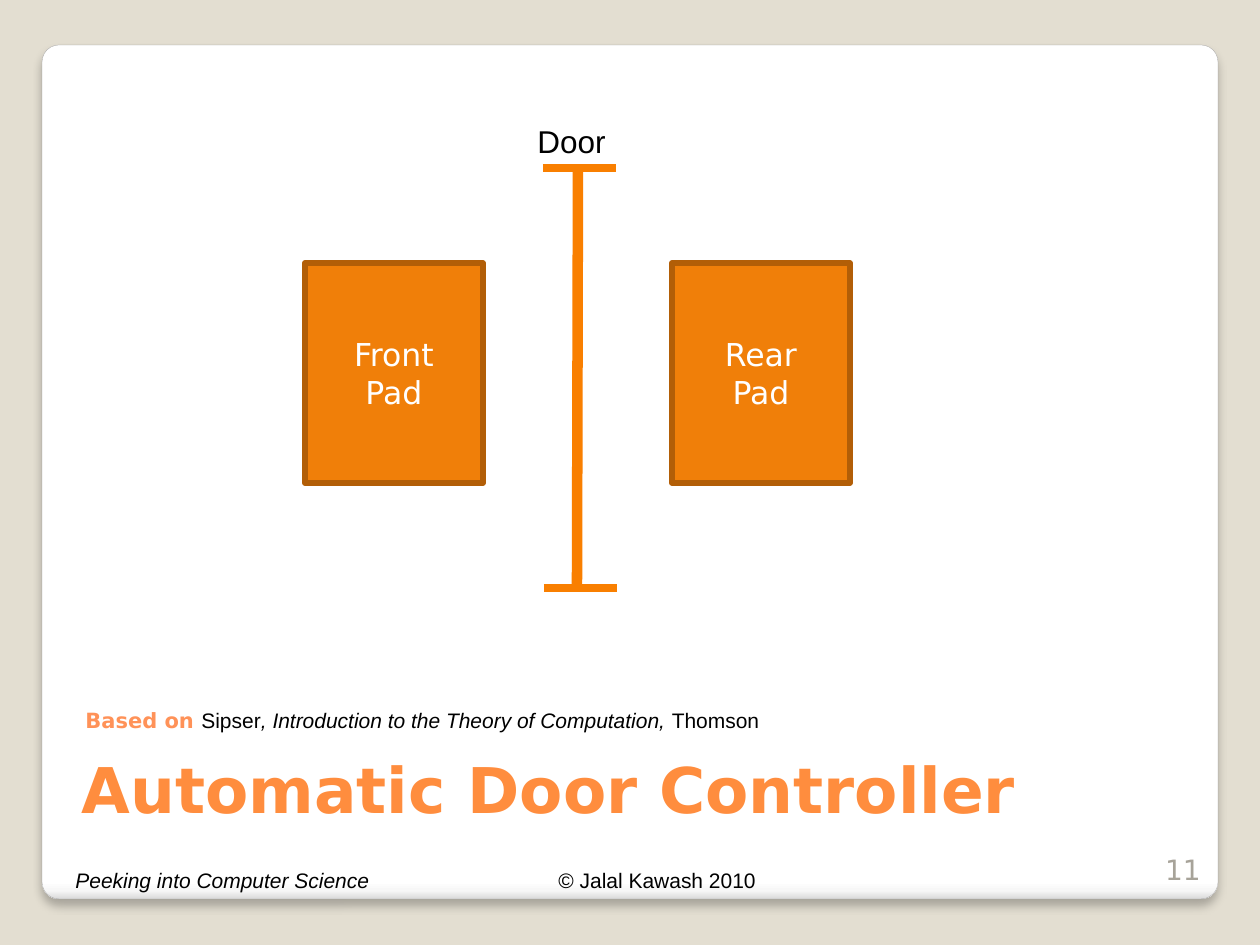
from dataclasses import dataclass

from lxml import etree
from pptx import Presentation
from pptx.dml.color import RGBColor
from pptx.enum.shapes import MSO_CONNECTOR, MSO_SHAPE
from pptx.enum.text import MSO_ANCHOR, MSO_AUTO_SIZE, PP_ALIGN
from pptx.oxml import parse_xml
from pptx.oxml.ns import qn
from pptx.util import Emu, Pt

STRAIGHT = MSO_CONNECTOR.STRAIGHT
RECTANGLE = MSO_SHAPE.RECTANGLE
ROUNDED = MSO_SHAPE.ROUNDED_RECTANGLE
TOP, MIDDLE, BOTTOM = MSO_ANCHOR.TOP, MSO_ANCHOR.MIDDLE, MSO_ANCHOR.BOTTOM
LEFT, CENTER, RIGHT = PP_ALIGN.LEFT, PP_ALIGN.CENTER, PP_ALIGN.RIGHT
NO_AUTOFIT = MSO_AUTO_SIZE.NONE
TITLE_ONLY = 5
PIXELS_PER_INCH = 126
DRAWING = "http://schemas.openxmlformats.org/drawingml/2006/main"


@dataclass(frozen=True)
class Theme:
    sans: str = "Arial"
    display: str = "DejaVu Sans"
    background: str = "E3DED1"
    panel_line: str = "A4A3A3"
    panel_stops: tuple = ((0, "FFFFFF"), (98, "FFFFFF"), (99, "F7F7F7"), (100, "DADADA"))
    title: str = "FF8D3E"
    source: str = "FF9258"
    pad: str = "F07F09"
    pad_line: str = "B25E07"
    door: str = "F97F00"
    number: str = "A7A399"
    black: str = "000000"
    white: str = "FFFFFF"
    title_size: int = 36
    label_size: int = 18
    number_size: int = 16
    small_size: int = 12


THEME = Theme()


def px(value):
    return Emu(round(value * 914400 / PIXELS_PER_INCH))


def color(value):
    return RGBColor.from_string(value)


def write_text(shape, paragraphs, size, font=THEME.sans, fill=THEME.black, bold=False,
               italic=False, align=LEFT, anchor=TOP, wrap=True):
    frame = shape.text_frame
    frame.auto_size = NO_AUTOFIT
    frame.word_wrap = wrap
    frame.vertical_anchor = anchor
    for index, runs in enumerate(paragraphs):
        paragraph = frame.paragraphs[0] if index == 0 else frame.add_paragraph()
        paragraph.alignment = align
        for text, changes in runs:
            style = {"font": font, "fill": fill, "bold": bold, "italic": italic, **changes}
            run = paragraph.add_run()
            run.text = text
            run.font.name = style["font"]
            run.font.size = Pt(size)
            run.font.bold = style["bold"]
            run.font.italic = style["italic"]
            run.font.color.rgb = color(style["fill"])


def add_label(slide, box, runs, size, **style):
    shape = slide.shapes.add_textbox(*map(px, box))
    write_text(shape, [runs], size, **style)


def add_panel(slide, box):
    panel = slide.shapes.add_shape(ROUNDED, *map(px, box))
    panel.adjustments[0] = 0.02
    panel.line.color.rgb = color(THEME.panel_line)
    panel.line.width = Pt(0.16)
    panel.fill.gradient()
    panel.fill.gradient_angle = 270
    properties = panel.element.spPr
    stops = properties.find(qn("a:gradFill")).find(qn("a:gsLst"))
    for stop in list(stops):
        stops.remove(stop)
    for position, value in THEME.panel_stops:
        stop = etree.SubElement(stops, qn("a:gs"), pos=str(position * 1000))
        etree.SubElement(stop, qn("a:srgbClr"), val=value)
    properties.append(parse_xml(
        f'<a:effectLst xmlns:a="{DRAWING}"><a:outerShdw blurRad="{Pt(5)}" dist="{Pt(4)}" '
        f'dir="5400000" algn="t" rotWithShape="0"><a:srgbClr val="{THEME.black}">'
        '<a:alpha val="25000"/></a:srgbClr></a:outerShdw></a:effectLst>'))
    slide.shapes.title.element.addprevious(panel.element)


def add_pad(slide, box, words):
    pad = slide.shapes.add_shape(RECTANGLE, *map(px, box))
    pad.shadow.inherit = False
    pad.fill.solid()
    pad.fill.fore_color.rgb = color(THEME.pad)
    pad.line.color.rgb = color(THEME.pad_line)
    pad.line.width = Pt(3.35)
    write_text(pad, [[(word, {})] for word in words], THEME.label_size,
               font=THEME.display, fill=THEME.white, align=CENTER, anchor=MIDDLE)


def add_line(slide, start, end, width):
    line = slide.shapes.add_connector(STRAIGHT, *map(px, start + end))
    line.line.color.rgb = color(THEME.door)
    line.line.width = Pt(width)
    etree.SubElement(line.element.spPr, qn("a:effectLst"))


def add_title(slide, box, text):
    title = slide.shapes.title
    title.left, title.top, title.width, title.height = map(px, box)
    write_text(title, [[(text, {})]], THEME.title_size, font=THEME.display,
               fill=THEME.title, bold=True, anchor=BOTTOM)


def main():
    presentation = Presentation()
    presentation.slide_width, presentation.slide_height = px(1260), px(945)
    slide = presentation.slides.add_slide(presentation.slide_layouts[TITLE_ONLY])
    slide.background.fill.solid()
    slide.background.fill.fore_color.rgb = color(THEME.background)

    add_panel(slide, (42, 45, 1176, 854))
    add_label(slide, (546, 861, 224, 38), [("© Jalal Kawash 2010", {})],
              THEME.small_size, wrap=False)
    add_label(slide, (63, 861, 321, 38), [("Peeking into Computer Science", {})],
              THEME.small_size, italic=True, wrap=False)
    add_title(slide, (69, 687, 1128, 145), "Automatic Door Controller")

    for left, side in ((305, "Front"), (672, "Rear")):
        add_pad(slide, (left, 263, 178, 220), (side, "Pad"))

    add_line(slide, (578, 168), (577, 588), 6)
    for left, top in ((543, 168), (544, 588)):
        add_line(slide, (left, top), (left + 73, top), 4.5)
    add_label(slide, (525, 116, 102, 50), [("Door", {})], THEME.label_size, wrap=False)

    source = [
        ("Based on ", {"font": THEME.display, "fill": THEME.source, "bold": True}),
        ("Sipser", {}),
        (", Introduction to the Theory of Computation, ", {"italic": True}),
        ("Thomson", {}),
    ]
    add_label(slide, (73, 619, 1128, 120), source, THEME.small_size, anchor=BOTTOM)
    add_label(slide, (1150, 842, 63, 50), [("11", {})], THEME.number_size,
              font=THEME.display, fill=THEME.number, align=RIGHT, anchor=BOTTOM)

    presentation.save("out.pptx")


if __name__ == "__main__":
    main()
